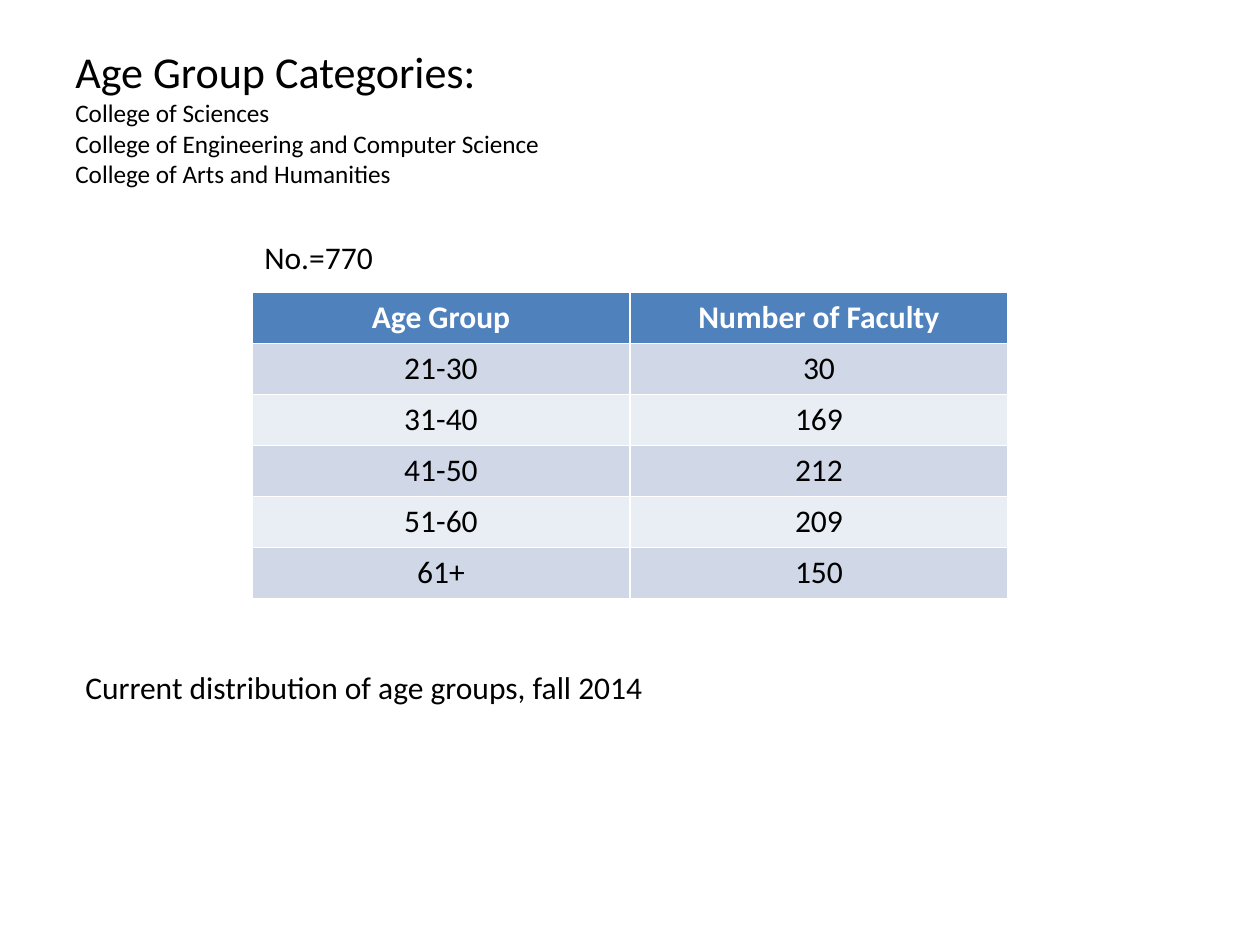
"""Build the slide showing faculty numbers by age group."""
import dataclasses

import pptx
import pptx.dml.color
import pptx.enum.text
import pptx.slide
import pptx.text.text
import pptx.util

Cm = pptx.util.Cm
Pt = pptx.util.Pt
RGB = pptx.dml.color.RGBColor
Align = pptx.enum.text.PP_ALIGN
Anchor = pptx.enum.text.MSO_ANCHOR


@dataclasses.dataclass(frozen=True)
class Theme:
    font: str = "Calibri"
    ink: RGB = RGB.from_string("000000")
    header_ink: RGB = RGB.from_string("FFFFFF")
    header_fill: RGB = RGB.from_string("4F81BD")
    bands: tuple[RGB, RGB] = (RGB.from_string("D0D8E8"), RGB.from_string("E9EDF4"))
    heading_size: float = 25.2
    college_size: float = 14.4
    body_size: float = 18


@dataclasses.dataclass(frozen=True)
class Line:
    text: str
    size: float


@dataclasses.dataclass(frozen=True)
class Label:
    lines: tuple[Line, ...]
    left: float
    top: float
    width: float
    height: float
    wrap: bool = False
    anchor: Anchor = Anchor.TOP


THEME = Theme()
COLLEGES = (
    "College of Sciences",
    "College of Engineering and Computer Science",
    "College of Arts and Humanities",
)
LABELS = (
    Label(
        (
            Line("Age Group Categories:", THEME.heading_size),
            *(Line(college, THEME.college_size) for college in COLLEGES),
        ),
        1.27, 0.76, 22.86, 3.18, wrap=True, anchor=Anchor.MIDDLE,
    ),
    Label((Line("No.=770", THEME.body_size),), 5.08, 4.67, 2.72, 1.03),
    Label(
        (Line("Current distribution of age groups, fall 2014", THEME.body_size),),
        1.47, 13.34, 11.89, 1.03,
    ),
)
AGE_GROUPS = (
    ("Age Group", "Number of Faculty"),
    ("21-30", "30"),
    ("31-40", "169"),
    ("41-50", "212"),
    ("51-60", "209"),
    ("61+", "150"),
)


def style_paragraph(
    paragraph: pptx.text.text._Paragraph,
    size: float,
    color: RGB = THEME.ink,
    bold: bool = False,
    align: Align = Align.LEFT,
) -> None:
    paragraph.alignment = align
    paragraph.font.name = THEME.font
    paragraph.font.size = Pt(size)
    paragraph.font.bold = bold
    paragraph.font.color.rgb = color


def add_label(slide: pptx.slide.Slide, label: Label) -> None:
    frame = slide.shapes.add_textbox(
        Cm(label.left), Cm(label.top), Cm(label.width), Cm(label.height)
    ).text_frame
    frame.word_wrap = label.wrap
    frame.vertical_anchor = label.anchor
    frame.text = "\n".join(line.text for line in label.lines)
    for paragraph, line in zip(frame.paragraphs, label.lines):
        style_paragraph(paragraph, line.size)


def add_age_table(slide: pptx.slide.Slide, rows: tuple[tuple[str, ...], ...]) -> None:
    table = slide.shapes.add_table(
        len(rows), len(rows[0]), Cm(5.08), Cm(5.89), Cm(15.24), Cm(1.03 * len(rows))
    ).table
    for row_index, row in enumerate(rows):
        header = row_index == 0
        fill = THEME.header_fill if header else THEME.bands[(row_index - 1) % 2]
        ink = THEME.header_ink if header else THEME.ink
        for column_index, value in enumerate(row):
            cell = table.cell(row_index, column_index)
            cell.text = value
            cell.fill.solid()
            cell.fill.fore_color.rgb = fill
            style_paragraph(
                cell.text_frame.paragraphs[0], THEME.body_size, ink, header, Align.CENTER
            )


def main() -> None:
    presentation = pptx.Presentation()
    presentation.slide_width = Cm(25.4)
    presentation.slide_height = Cm(19.05)
    slide = presentation.slides.add_slide(presentation.slide_layouts[6])
    add_age_table(slide, AGE_GROUPS)
    for label in LABELS:
        add_label(slide, label)
    presentation.save("out.pptx")


if __name__ == "__main__":
    main()
